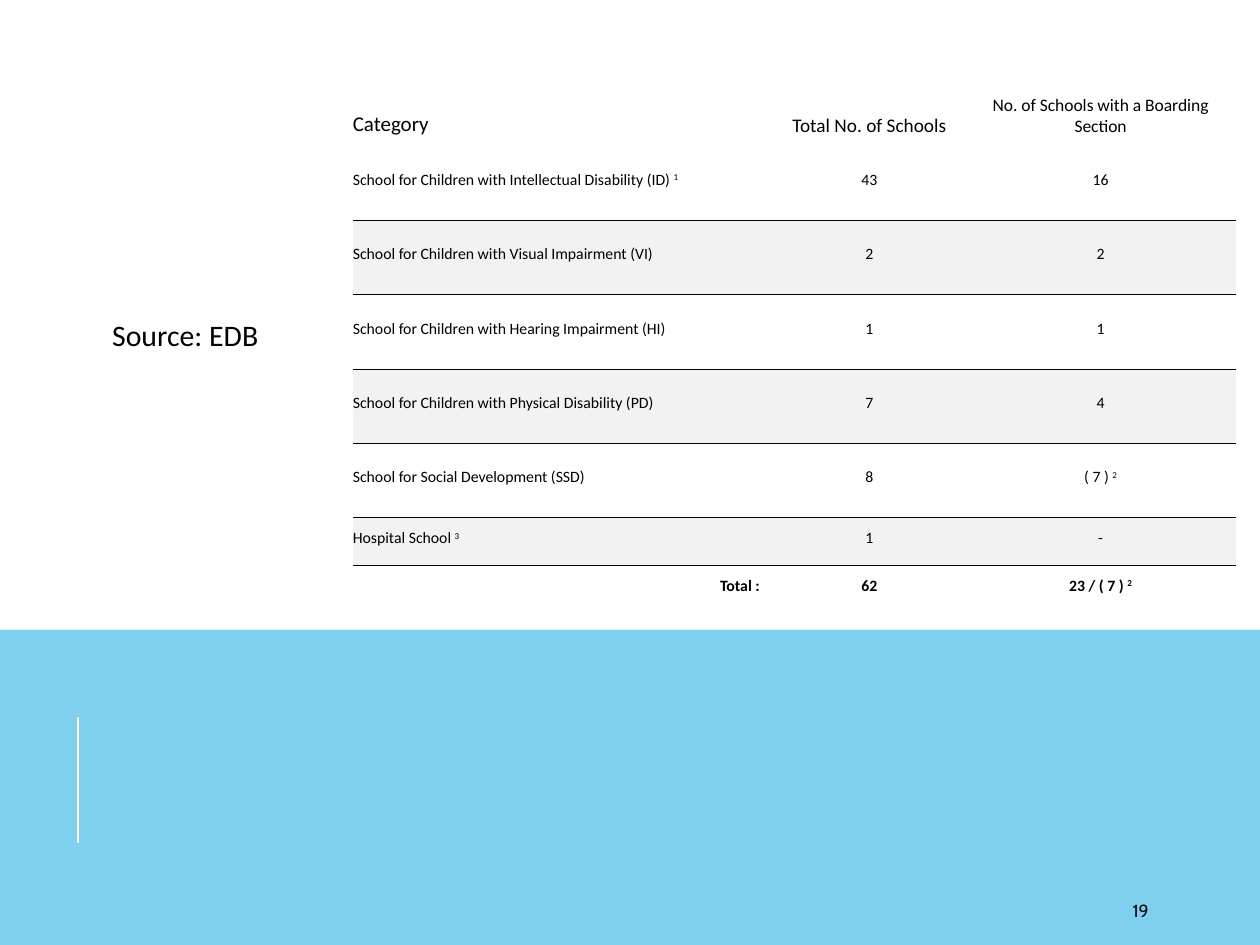
from dataclasses import dataclass

from lxml import etree
from pptx import Presentation
from pptx import util as u
from pptx.dml import color
from pptx.enum import shapes, text
from pptx.oxml import ns

LEFT, CENTER, RIGHT = text.PP_ALIGN.LEFT, text.PP_ALIGN.CENTER, text.PP_ALIGN.RIGHT
MIDDLE, BOTTOM = text.MSO_ANCHOR.MIDDLE, text.MSO_ANCHOR.BOTTOM


@dataclass(frozen=True)
class Theme:
    """Colours, fonts and type sizes of the slide."""
    band: str = "7FD0EF"
    stripe: str = "F2F2F2"
    ink: str = "000000"
    soft_ink: str = "0D0D0D"
    paper: str = "FFFFFF"
    body_font: str = "Calibri"
    number_font: str = "Cabin"
    title_size: int = 17
    header_sizes: tuple = (12, 11, 10)
    body_size: int = 9
    number_size: int = 10
    rule: float = 0.75
    accent: float = 1.5
    plain_table: str = "{2D5ABB26-0587-4C30-8999-92F81FD0307C}"


class Page:
    """Draws elements on one slide using a grid of 10 columns by 7.5 rows."""

    COLUMNS, ROWS = 10, 7.5

    def __init__(self, deck, theme):
        """Add a blank slide to the deck."""
        self.theme = theme
        self.column = deck.slide_width / self.COLUMNS
        self.row = deck.slide_height / self.ROWS
        self.slide = deck.slides.add_slide(deck.slide_layouts[6])

    def place(self, left, top, width, height):
        """Turn grid lengths into slide lengths."""
        return [u.Emu(round(n * unit)) for n, unit in
                zip((left, top, width, height), (self.column, self.row) * 2)]

    def typeset(self, paragraph, wording, size, font=None, ink=None, bold=False, align=LEFT):
        """Fill a paragraph, raising whatever follows a caret."""
        for part, raised in zip(wording.split("^"), (False, True)):
            run = paragraph.add_run()
            run.text = part
            if raised:
                run._r.get_or_add_rPr().set("baseline", "30000")
        paragraph.alignment = align
        paragraph.font.size = u.Pt(size)
        paragraph.font.name = font or self.theme.body_font
        paragraph.font.bold = bold
        paragraph.font.color.rgb = color.RGBColor.from_string(ink or self.theme.ink)

    def band(self, *box):
        """Draw a plain filled rectangle."""
        band = self.slide.shapes.add_shape(shapes.MSO_SHAPE.RECTANGLE, *self.place(*box))
        band.shadow.inherit = False
        band.fill.solid()
        band.fill.fore_color.rgb = color.RGBColor.from_string(self.theme.band)
        band.line.fill.background()

    def accent(self, left, top, height):
        """Draw a vertical accent line upwards."""
        x, y, _, rise = self.place(left, top, 0, height)
        accent = self.slide.shapes.add_connector(
            shapes.MSO_CONNECTOR.STRAIGHT, x, y + rise, x, y)
        accent.line.color.rgb = color.RGBColor.from_string(self.theme.paper)
        accent.line.width = u.Pt(self.theme.accent)
        etree.SubElement(accent._element.spPr, ns.qn("a:effectLst"))

    def label(self, wording, box, size, inset=0.1, spacing=1.0, **style):
        """Add a vertically centred line of text."""
        frame = self.slide.shapes.add_textbox(*self.place(*box)).text_frame
        frame.word_wrap = True
        frame.vertical_anchor = MIDDLE
        frame.margin_left = frame.margin_right = u.Inches(inset)
        frame.margin_top = frame.margin_bottom = u.Inches(0.05)
        paragraph = frame.paragraphs[0]
        paragraph.line_spacing = spacing
        paragraph.space_after = u.Pt(6)
        self.typeset(paragraph, wording, size, **style)

    def rule(self, cell, side):
        """Rule one side of a table cell."""
        line = etree.SubElement(cell._tc.get_or_add_tcPr(), ns.qn(f"a:{side}"),
                                w=str(u.Pt(self.theme.rule)))
        fill = etree.SubElement(line, ns.qn("a:solidFill"))
        etree.SubElement(fill, ns.qn("a:srgbClr"), val=self.theme.ink)

    def cell(self, cell, wording, row, column, last):
        """Style and fill one cell according to its row and column."""
        header, total = row == 0, row == last
        striped = not header and not total and row % 2 == 0
        cell.margin_left, cell.margin_right = 0, u.Inches(0.11)
        cell.margin_top = u.Inches(0.01 if header else 0.02)
        cell.margin_bottom = u.Inches(0.07)
        cell.vertical_anchor = BOTTOM if header else MIDDLE
        if striped:
            self.rule(cell, "lnT")
            cell.fill.solid()
            cell.fill.fore_color.rgb = color.RGBColor.from_string(self.theme.stripe)
        else:
            if not header and not total:
                self.rule(cell, "lnB")
            cell.fill.background()
        size = self.theme.header_sizes[column] if header else self.theme.body_size
        align = CENTER if column else RIGHT if total else LEFT
        self.typeset(cell.text_frame.paragraphs[0], wording, size, bold=total, align=align)

    def table(self, left, top, widths, heights, records):
        """Add a table with striped, ruled rows."""
        box = self.place(left, top, sum(widths), sum(heights))
        table = self.slide.shapes.add_table(len(heights), len(widths), *box).table
        table._tbl.tblPr.find(ns.qn("a:tableStyleId")).text = self.theme.plain_table
        table.first_row = table.horz_banding = False
        for column, width in zip(table.columns, widths):
            column.width = u.Emu(round(width * self.column))
        for row, height in zip(table.rows, heights):
            row.height = u.Emu(round(height * self.row))
        for r, record in enumerate(records):
            for c, wording in enumerate(record):
                self.cell(table.cell(r, c), wording, r, c, len(records) - 1)


SCHOOLS = [
    ("Category", "Total No. of Schools", "No. of Schools with a Boarding Section"),
    ("School for Children with Intellectual Disability (ID) ^1", "43", "16"),
    ("School for Children with Visual Impairment (VI)", "2", "2"),
    ("School for Children with Hearing Impairment (HI)", "1", "1"),
    ("School for Children with Physical Disability (PD)", "7", "4"),
    ("School for Social Development (SSD)", "8", "( 7 ) ^2"),
    ("Hospital School ^3", "1", "-"),
    ("Total :", "62", "23 / ( 7 ) ^2"),
]


def main():
    """Build and save the slide."""
    deck = Presentation()
    deck.slide_width, deck.slide_height = u.Inches(10), u.Inches(7.5)
    theme = Theme()
    page = Page(deck, theme)
    page.band(0, 5, 10, 2.5)
    page.label("Source: EDB", (0.84, 0.7, 3.9, 3.94), theme.title_size,
               inset=0.05, spacing=0.9)
    page.accent(0.62, 5.69, 1)
    page.label("19", (8.89, 7.08, 0.8, 0.3), theme.number_size,
               font=theme.number_font, ink=theme.soft_ink)
    page.table(2.8, 0.29, (3.34, 1.63, 2.04),
               [0.87] + [0.59] * 5 + [0.38] * 2, SCHOOLS)
    deck.save("out.pptx")


if __name__ == "__main__":
    main()
